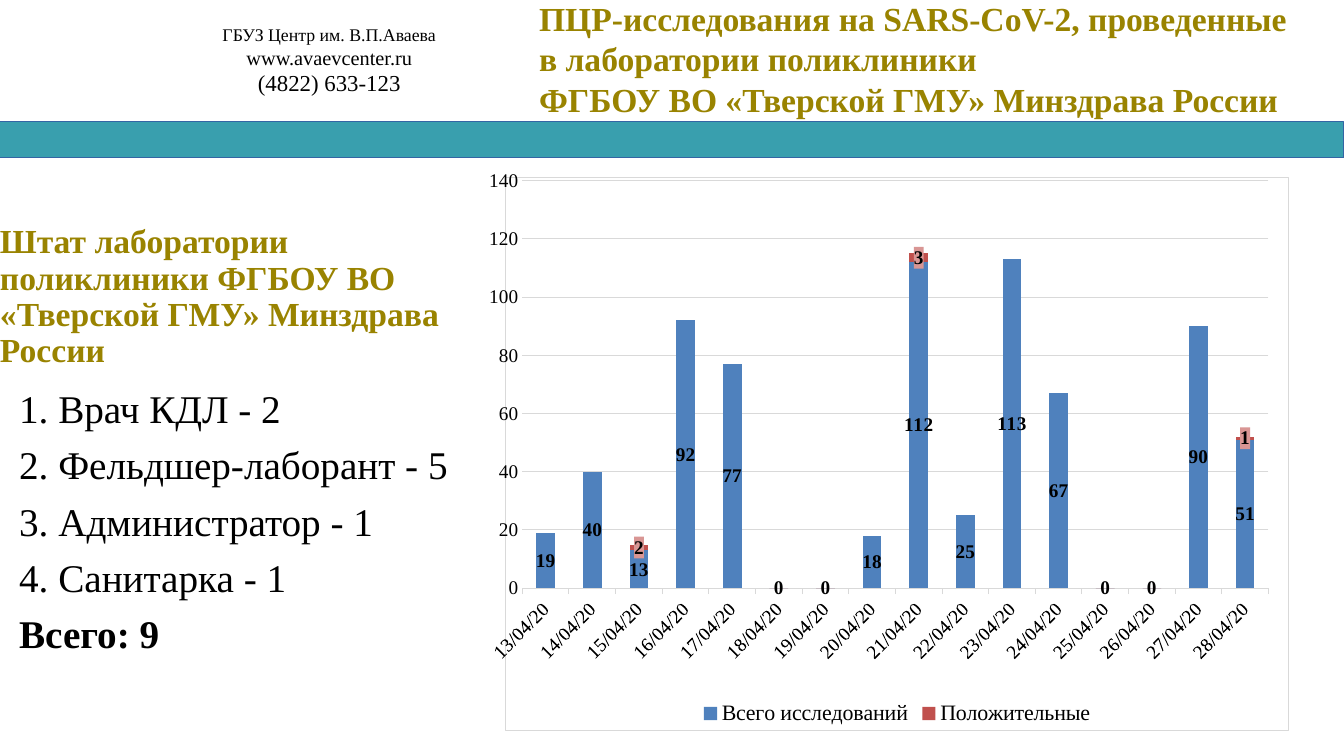
from dataclasses import dataclass

from lxml.etree import SubElement
from pptx import Presentation
from pptx.chart.data import CategoryChartData
from pptx.dml.color import RGBColor
from pptx.enum.chart import XL_CHART_TYPE as ChartType
from pptx.enum.chart import XL_LABEL_POSITION as LabelPosition
from pptx.enum.chart import XL_LEGEND_POSITION as LegendPosition
from pptx.enum.chart import XL_TICK_MARK as TickMark
from pptx.enum.shapes import MSO_SHAPE as Shape
from pptx.enum.text import MSO_ANCHOR as Anchor
from pptx.enum.text import PP_ALIGN as Align
from pptx.oxml import parse_xml
from pptx.oxml.ns import nsdecls, qn
from pptx.util import Inches, Pt


@dataclass(frozen=True)
class Theme:
    font: str = "Times New Roman"
    ink: str = "000000"
    gold: str = "998300"
    teal: str = "399FAE"
    band_line: str = "3465A4"
    grid: str = "D9D9D9"
    paper: str = "FFFFFF"
    total: str = "4F81BD"
    positive: str = "C0504D"
    label_fill: str = "D99694"
    contact_sizes: tuple = (12.7, 14.5, 16.3)
    heading: int = 24
    body: int = 28
    axis: int = 14
    legend: int = 16
    hairline: float = 0.75


THEME = Theme()
COLUMNS, ROWS = 160, 90
WIDTH, HEIGHT = Inches(13.33), Inches(7.5)

CONTACTS = ["ГБУЗ Центр им. В.П.Аваева", "www.avaevcenter.ru", "(4822) 633-123"]
HEADING = ("ПЦР-исследования на SARS-CoV-2, проведенные в лаборатории поликлиники\v"
           "ФГБОУ ВО «Тверской ГМУ» Минздрава России")
STAFF_TITLE = "Штат лаборатории поликлиники ФГБОУ ВО «Тверской ГМУ» Минздрава России"
STAFF = ["1. Врач КДЛ - 2", "2. Фельдшер-лаборант - 5", "3. Администратор - 1",
         "4. Санитарка - 1"]
STAFF_TOTAL = "Всего: 9"
DATES = [f"{day}/04/20" for day in range(13, 29)]
TESTS = [19, 40, 13, 92, 77, 0, 0, 18, 112, 25, 113, 67, 0, 0, 90, 51]
POSITIVES = {"15/04/20": 2, "21/04/20": 3, "28/04/20": 1}


def area(left, top, width, height):
    column, row = WIDTH / COLUMNS, HEIGHT / ROWS
    return (round(left * column), round(top * row),
            round(width * column), round(height * row))


def style_font(font, size, color=THEME.ink, bold=False):
    font.name = THEME.font
    font.size = Pt(size)
    font.bold = bold
    font.color.rgb = RGBColor.from_string(color)


def style_line(line, color):
    line.color.rgb = RGBColor.from_string(color)
    line.width = Pt(THEME.hairline)


def paint(fill, color):
    fill.solid()
    fill.fore_color.rgb = RGBColor.from_string(color)


def add_box(page, place, anchor=Anchor.TOP, margins=(0.1, 0.05)):
    frame = page.shapes.add_textbox(*area(*place)).text_frame
    frame.word_wrap = True
    frame.vertical_anchor = anchor
    frame.margin_left = frame.margin_right = Inches(margins[0])
    frame.margin_top = frame.margin_bottom = Inches(margins[1])
    return frame


def add_text(frame, text, size, color=THEME.ink, bold=False, align=Align.LEFT,
             spacing=1.0, before=0):
    first = not frame.paragraphs[0].text
    para = frame.paragraphs[0] if first else frame.add_paragraph()
    para.text = text
    para.alignment = align
    para.line_spacing = spacing
    para.space_before = Pt(0 if first else before)
    for span in para.runs:
        style_font(span.font, size, color, bold)


def add_band(page, place):
    band = page.shapes.add_shape(Shape.RECTANGLE, *area(*place))
    band.shadow.inherit = False
    paint(band.fill, THEME.teal)
    style_line(band.line, THEME.band_line)


def shape_properties(fill, line=None):
    outline = (f'<a:ln w="{Pt(THEME.hairline)}"><a:solidFill><a:srgbClr val="{line}"/>'
               '</a:solidFill></a:ln>' if line else '<a:ln><a:noFill/></a:ln>')
    return parse_xml(f'<c:spPr {nsdecls("c", "a")}><a:solidFill><a:srgbClr val="{fill}"/>'
                     f'</a:solidFill>{outline}</c:spPr>')


def place_plot(chart, left, top, width, height):
    plot_area = chart.element.find(".//" + qn("c:plotArea"))
    for old in plot_area.findall(qn("c:layout")):
        plot_area.remove(old)
    layout = parse_xml(f'<c:layout {nsdecls("c")}/>')
    manual = SubElement(layout, qn("c:manualLayout"))
    settings = {"layoutTarget": "inner", "xMode": "edge", "yMode": "edge",
                "x": left, "y": top, "w": width, "h": height}
    for name, value in settings.items():
        SubElement(manual, qn(f"c:{name}")).set("val", str(value))
    plot_area.insert(0, layout)


def label_series(series, color):
    paint(series.format.fill, color)
    series.invert_if_negative = False
    labels = series.data_labels
    labels.show_value = True
    labels.position = LabelPosition.CENTER
    style_font(labels.font, THEME.axis, bold=True)


def highlight_positives(series):
    labels = series.data_labels
    node = series.format.fill and labels.font and series._element.find(qn("c:dLbls"))
    node.find(qn("c:txPr")).addprevious(shape_properties(THEME.label_fill))
    zeros = [index for index, value in enumerate(series.values) if not value]
    for position, index in enumerate(zeros):
        node.insert(position, parse_xml(
            f'<c:dLbl {nsdecls("c")}><c:idx val="{index}"/><c:delete val="1"/></c:dLbl>'))


def style_axes(chart):
    dates, counts = chart.category_axis, chart.value_axis
    for axis in (dates, counts):
        style_font(axis.tick_labels.font, THEME.axis)
        axis.minor_tick_mark = TickMark.NONE
    dates.major_tick_mark = TickMark.OUTSIDE
    style_line(dates.format.line, THEME.grid)
    body = chart.element.find(f".//{qn('c:catAx')}/{qn('c:txPr')}/{qn('a:bodyPr')}")
    body.set("rot", "-2700000")
    body.set("vert", "horz")
    counts.major_tick_mark = TickMark.NONE
    counts.minimum_scale, counts.maximum_scale, counts.major_unit = 0, 140, 20
    counts.format.line.fill.background()
    style_line(counts.major_gridlines.format.line, THEME.grid)


def add_tests_chart(page, place):
    data = CategoryChartData()
    data.categories = DATES
    data.add_series("Всего исследований", TESTS)
    data.add_series("Положительные", [POSITIVES.get(date, 0) for date in DATES])
    chart = page.shapes.add_chart(ChartType.COLUMN_STACKED, *area(*place), data).chart
    chart.has_title = False
    style_font(chart.font, THEME.axis)
    chart.element.find(qn("c:txPr")).addprevious(shape_properties(THEME.paper, THEME.grid))
    chart.has_legend = True
    chart.legend.position = LegendPosition.BOTTOM
    chart.legend.include_in_layout = False
    style_font(chart.legend.font, THEME.legend)
    plot = chart.plots[0]
    plot.gap_width, plot.overlap, plot.vary_by_categories = 150, 100, False
    for series, color in zip(plot.series, (THEME.total, THEME.positive)):
        label_series(series, color)
    highlight_positives(plot.series[1])
    style_axes(chart)
    place_plot(chart, 0.022, 0.005, 0.952, 0.738)


def main():
    deck = Presentation()
    deck.slide_width, deck.slide_height = WIDTH, HEIGHT
    page = deck.slides.add_slide(deck.slide_layouts[6])
    add_band(page, (0, 14.5, 160, 4.3))
    contacts = add_box(page, (20.8, 2.3, 36.8, 9.8), margins=(0.09, 0.04))
    for line, size in zip(CONTACTS, THEME.contact_sizes):
        add_text(contacts, line, size, align=Align.CENTER)
    heading = add_box(page, (63, -0.84, 93.7, 15.7))
    add_text(heading, HEADING, THEME.heading, color=THEME.gold, bold=True)
    add_tests_chart(page, (58.2, 20.2, 95.3, 66.8))
    staff = add_box(page, (1.1, 45.8, 69.2, 41.2))
    for line in STAFF + [STAFF_TOTAL]:
        add_text(staff, line, THEME.body, bold=line == STAFF_TOTAL, spacing=0.9, before=10)
    title = add_box(page, (0, 30.8, 54.6, 9.2), anchor=Anchor.MIDDLE, margins=(0, 0))
    add_text(title, STAFF_TITLE, THEME.heading, color=THEME.gold, bold=True, spacing=0.9)
    deck.save("out.pptx")


if __name__ == "__main__":
    main()
